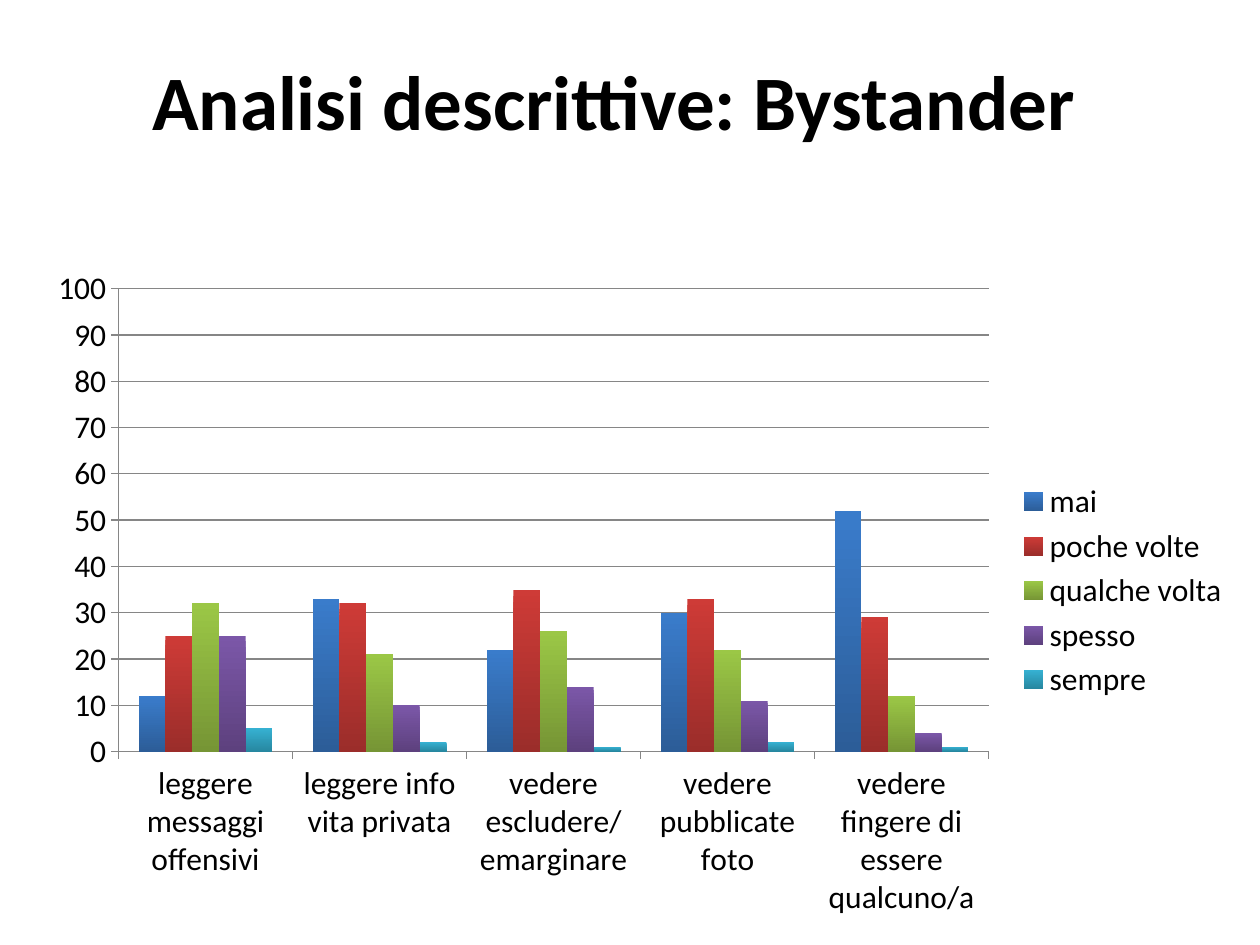
from dataclasses import dataclass

from lxml.etree import SubElement
from pptx import Presentation
from pptx.chart.chart import Chart
from pptx.chart.data import CategoryChartData
from pptx.chart.series import BarSeries
from pptx.dml.color import RGBColor
from pptx.enum.chart import XL_CHART_TYPE as ChartType
from pptx.enum.chart import XL_LEGEND_POSITION as LegendPosition
from pptx.enum.chart import XL_TICK_MARK as TickMark
from pptx.enum.text import MSO_ANCHOR, PP_ALIGN
from pptx.oxml.ns import qn
from pptx.slide import Slide
from pptx.util import Inches, Pt


@dataclass(frozen=True)
class Theme:
    font: str = "Calibri"
    text: str = "000000"
    rule: str = "868686"
    title_size: int = 44
    chart_size: int = 18


@dataclass(frozen=True)
class Box:
    """Position and size as shares of the surrounding area."""
    left: float
    top: float
    width: float
    height: float


@dataclass(frozen=True)
class Frequency:
    name: str
    percentages: tuple[int, ...]
    top_color: str
    bottom_color: str


THEME = Theme()
SLIDE_WIDTH, SLIDE_HEIGHT = Inches(10), Inches(7.5)
TITLE_BOX = Box(0, 0.04, 0.975, 0.13)
CHART_BOX = Box(0.027, 0.27, 0.959, 0.71)
PLOT_BOX = Box(0.07, 0.05, 0.72, 0.69)

SITUATIONS = (
    "leggere messaggi offensivi",
    "leggere info vita privata",
    "vedere escludere/emarginare",
    "vedere pubblicate foto",
    "vedere fingere di essere qualcuno/a",
)
FREQUENCIES = (
    Frequency("mai", (12, 33, 22, 30, 52), "3A7CCB", "2C5D98"),
    Frequency("poche volte", (25, 32, 35, 33, 29), "CE3B37", "9B2D2A"),
    Frequency("qualche volta", (32, 21, 26, 22, 12), "9BC746", "769535"),
    Frequency("spesso", (25, 10, 14, 11, 4), "7B57A8", "5D417E"),
    Frequency("sempre", (5, 2, 1, 2, 1), "36B1D2", "2787A0"),
)


def rgb(color: str) -> RGBColor:
    return RGBColor.from_string(color)


def on_slide(box: Box) -> tuple[int, int, int, int]:
    return (int(box.left * SLIDE_WIDTH), int(box.top * SLIDE_HEIGHT),
            int(box.width * SLIDE_WIDTH), int(box.height * SLIDE_HEIGHT))


def style_font(font, size: int, bold: bool = False) -> None:
    font.name, font.size, font.bold = THEME.font, Pt(size), bold
    font.color.rgb = rgb(THEME.text)


def add_title(slide: Slide, wording: str) -> None:
    title = slide.shapes.title
    title.left, title.top, title.width, title.height = on_slide(TITLE_BOX)
    title.text_frame.text = wording
    title.text_frame.vertical_anchor = MSO_ANCHOR.MIDDLE
    heading = title.text_frame.paragraphs[0]
    heading.alignment = PP_ALIGN.CENTER
    style_font(heading.runs[0].font, THEME.title_size, bold=True)


def shade_bars(series: BarSeries, frequency: Frequency) -> None:
    series.invert_if_negative = False
    fill = series.format.fill
    fill.gradient()
    fill.gradient_angle = 270
    colors = (frequency.top_color, frequency.bottom_color)
    for stop, color in zip(fill.gradient_stops, colors):
        stop.color.rgb = rgb(color)


def place_plot(chart: Chart, box: Box) -> None:
    """Fix the inner plot area within the chart."""
    plot_area = chart.plots[0]._element.getparent()
    layout = plot_area.find(qn("c:layout"))
    if layout is None:
        layout = SubElement(plot_area, qn("c:layout"))
        plot_area.insert(0, layout)
    manual = SubElement(layout, qn("c:manualLayout"))
    settings = (("layoutTarget", "inner"), ("xMode", "edge"), ("yMode", "edge"),
                ("x", box.left), ("y", box.top), ("w", box.width), ("h", box.height))
    for tag, value in settings:
        SubElement(manual, qn(f"c:{tag}")).set("val", str(value))


def style_axes(chart: Chart) -> None:
    situations, percentages = chart.category_axis, chart.value_axis
    percentages.minimum_scale, percentages.maximum_scale = 0, 100
    percentages.major_unit = 10
    percentages.has_major_gridlines = True
    for axis in (situations, percentages):
        axis.major_tick_mark = TickMark.OUTSIDE
        axis.minor_tick_mark = TickMark.NONE
    for ruled in (situations, percentages, percentages.major_gridlines):
        ruled.format.line.color.rgb = rgb(THEME.rule)
        ruled.format.line.width = Pt(0.75)


def add_frequency_chart(slide: Slide) -> None:
    answers = CategoryChartData(number_format="General")
    answers.categories = SITUATIONS
    for frequency in FREQUENCIES:
        answers.add_series(frequency.name, frequency.percentages)
    chart = slide.shapes.add_chart(
        ChartType.COLUMN_CLUSTERED, *on_slide(CHART_BOX), answers).chart
    chart.has_title = False
    style_font(chart.font, THEME.chart_size)
    chart.has_legend = True
    chart.legend.position = LegendPosition.RIGHT
    chart.legend.include_in_layout = False
    bars = chart.plots[0]
    bars.gap_width, bars.overlap = 150, 0
    bars.vary_by_categories = False
    for series, frequency in zip(bars.series, FREQUENCIES):
        shade_bars(series, frequency)
    style_axes(chart)
    place_plot(chart, PLOT_BOX)


def main() -> None:
    deck = Presentation()
    deck.slide_width, deck.slide_height = SLIDE_WIDTH, SLIDE_HEIGHT
    title_only = deck.slide_layouts.get_by_name("Title Only")
    slide = deck.slides.add_slide(title_only)
    add_title(slide, "Analisi descrittive: Bystander")
    add_frequency_chart(slide)
    deck.save("out.pptx")


if __name__ == "__main__":
    main()
